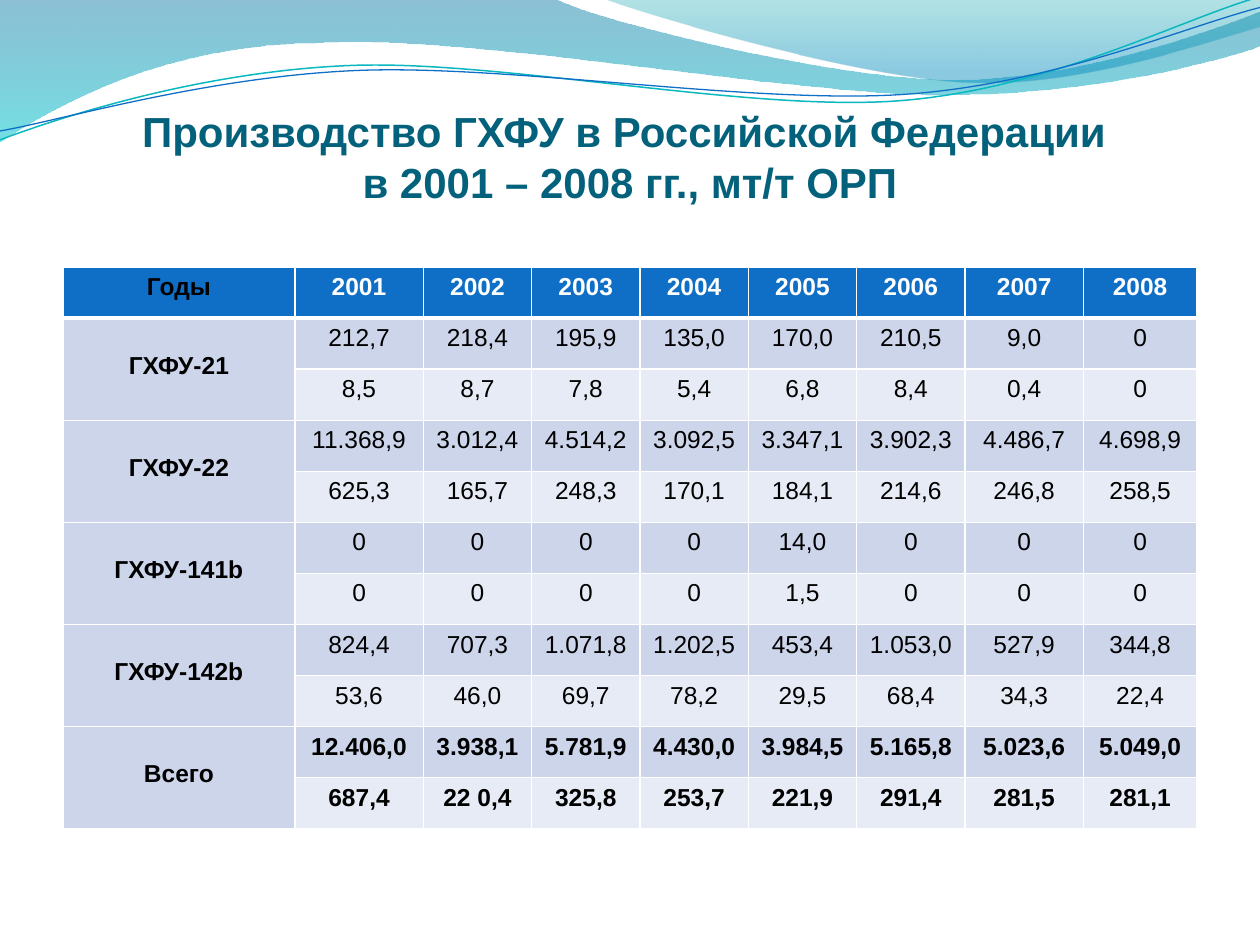
from dataclasses import dataclass
from math import cos, radians, sin

from lxml import etree
from pptx import Presentation
from pptx import util as u
from pptx.dml.color import RGBColor
from pptx.enum import text
from pptx.oxml.ns import qn
from pptx.slide import Slide

COLORS = {
    "title": "04617B", "header": "0F6FC6", "band_dark": "CCD5EA",
    "band_light": "E7EBF5", "white": "FFFFFF", "black": "000000",
    "wave_blue": "0074A1", "wave_cyan": "00C6CF", "crest_teal": "00A1A9",
    "crest_blue": "008BBF", "teal_line": "0AB8BF", "blue_line": "0F6FC6",
}

YEARS = [str(year) for year in range(2001, 2009)]
PRODUCTION = {
    "ГХФУ-21": [
        ["212,7", "218,4", "195,9", "135,0", "170,0", "210,5", "9,0", "0"],
        ["8,5", "8,7", "7,8", "5,4", "6,8", "8,4", "0,4", "0"],
    ],
    "ГХФУ-22": [
        ["11.368,9", "3.012,4", "4.514,2", "3.092,5", "3.347,1", "3.902,3", "4.486,7", "4.698,9"],
        ["625,3", "165,7", "248,3", "170,1", "184,1", "214,6", "246,8", "258,5"],
    ],
    "ГХФУ-141b": [
        ["0", "0", "0", "0", "14,0", "0", "0", "0"],
        ["0", "0", "0", "0", "1,5", "0", "0", "0"],
    ],
    "ГХФУ-142b": [
        ["824,4", "707,3", "1.071,8", "1.202,5", "453,4", "1.053,0", "527,9", "344,8"],
        ["53,6", "46,0", "69,7", "78,2", "29,5", "68,4", "34,3", "22,4"],
    ],
    "Всего": [
        ["12.406,0", "3.938,1", "5.781,9", "4.430,0", "3.984,5", "5.165,8", "5.023,6", "5.049,0"],
        ["687,4", "22 0,4", "325,8", "253,7", "221,9", "291,4", "281,5", "281,1"],
    ],
}
COLUMN_WIDTHS = [1.84, 1.02] + [0.86] * 5 + [0.94, 0.9]

WAVE = [
    (0, -0.01), (4.4, -0.01),
    (4.76, 0.17, 6.64, 0.63, 7.58, 0.63), (8.53, 0.63, 9.58, 0.26, 10, 0.09),
    (10.01, 0.36),
    (9.83, 0.44, 8.7, 0.76, 7.46, 0.75), (6.22, 0.75, 3.82, 0.28, 2.57, 0.34),
    (1.29, 0.35, 0.46, 0.83, -0.01, 1.13), (0, -0.01),
]
CREST = [
    (4.79, -0.01), (5.09, 0.11, 6.82, 0.62, 7.69, 0.65),
    (8.56, 0.69, 9.61, 0.32, 10, 0.21), (10, 0), (4.79, -0.01),
]
TEAL_CURVE = [
    (0, 1.11), (0.48, 0.93, 1.58, 0.57, 2.77, 0.52),
    (3.95, 0.47, 5.93, 0.89, 7.13, 0.8), (8.33, 0.71, 9.38, 0.15, 9.98, -0.02),
]
BLUE_CURVE = [
    (0, 1.04), (0.47, 0.96, 1.64, 0.61, 2.83, 0.56),
    (4.03, 0.51, 5.97, 0.83, 7.17, 0.75), (8.36, 0.67, 9.41, 0.21, 10, 0.06),
]


def rgb(name):
    return RGBColor.from_string(COLORS[name])


def turn(segment, pivot, degrees):
    c, s = cos(radians(degrees)), sin(radians(degrees))
    turned = []
    for x, y in zip(segment[::2], segment[1::2]):
        dx, dy = x - pivot[0], y - pivot[1]
        turned += [pivot[0] + dx * c - dy * s, pivot[1] + dx * s + dy * c]
    return turned


def write_text(frame, content, *, font, size, color, bold=False, before=0, after=0):
    paragraph = frame.paragraphs[0]
    paragraph.alignment = text.PP_ALIGN.CENTER
    paragraph.space_before, paragraph.space_after = u.Pt(before), u.Pt(after)
    for index, line in enumerate(content.split("\n")):
        if index:
            paragraph.add_line_break()
        run = paragraph.add_run()
        run.text = line
        run.font.name, run.font.size, run.font.bold = font, u.Pt(size), bold
        run.font.color.rgb = rgb(color)


@dataclass
class Deck:
    slide: Slide
    font: str = "Arial"
    title_size: int = 24
    table_size: int = 14

    def outline(self, segments, close):
        start, *points = [(u.Inches(x), u.Inches(y)) for segment in segments
                          for x, y in zip(segment[::2], segment[1::2])]
        builder = self.slide.shapes.build_freeform(*start, scale=1.0)
        builder.add_line_segments(points, close=close)
        shape = builder.convert_to_shape()
        shape.shadow.inherit = False
        lines = iter(list(shape._element.iter(qn("a:lnTo"))))
        for segment in segments[1:]:
            first = next(lines)
            if len(segment) == 6:
                first.tag = qn("a:cubicBezTo")
                for line in (next(lines), next(lines)):
                    first.append(line[0])
                    line.getparent().remove(line)
        return shape

    def wave(self, segments, stops):
        shape = self.outline(segments, True)
        shape.line.fill.background()
        shape.fill.gradient()
        shape.fill.gradient_angle = 270
        for stop, (position, color, _) in zip(shape.fill.gradient_stops, stops):
            stop.position = position
            stop.color.rgb = rgb(color)
        for tint, (_, _, opacity) in zip(shape._element.iter(qn("a:srgbClr")), stops):
            etree.SubElement(tint, qn("a:alpha"), val=str(opacity * 1000))

    def curve(self, segments, color, width, pivot, tilt=2.7):
        shape = self.outline([turn(segment, pivot, tilt) for segment in segments], False)
        shape.rotation = 360 - tilt
        shape.fill.background()
        shape.line.color.rgb = rgb(color)
        shape.line.width = u.Pt(width)

    def title(self, content, left, top, width, height):
        box = self.slide.shapes.add_textbox(*map(u.Inches, (left, top, width, height)))
        frame = box.text_frame
        frame.word_wrap = True
        frame.vertical_anchor = text.MSO_ANCHOR.BOTTOM
        frame.margin_left = frame.margin_right = frame.margin_bottom = 0
        write_text(frame, content, font=self.font, size=self.title_size,
                   color="title", bold=True)

    def cell(self, cell, content, fill, top=1, bottom=1, **style):
        properties = cell._tc.get_or_add_tcPr()
        for side, width in (("L", 1), ("R", 1), ("T", top), ("B", bottom)):
            border = etree.SubElement(properties, qn(f"a:ln{side}"), w=str(u.Pt(width)))
            paint = etree.SubElement(border, qn("a:solidFill"))
            etree.SubElement(paint, qn("a:srgbClr"), val=COLORS["white"])
        cell.fill.solid()
        cell.fill.fore_color.rgb = rgb(fill)
        if content:
            write_text(cell.text_frame, content, font=self.font,
                       size=self.table_size, **style)

    def table(self, left, top, height):
        rows = [["Годы", *YEARS]]
        for substance, (tonnes, potential) in PRODUCTION.items():
            rows += [[substance, *tonnes], ["", *potential]]
        grid = self.slide.shapes.add_table(
            len(rows), len(COLUMN_WIDTHS), u.Inches(left), u.Inches(top),
            u.Inches(sum(COLUMN_WIDTHS)), u.Inches(height)).table
        for column, width in zip(grid.columns, COLUMN_WIDTHS):
            column.width = u.Inches(width)
        for r, values in enumerate(rows):
            grid.rows[r].height = u.Inches(height / len(rows))
            for c, value in enumerate(values):
                cell = grid.cell(r, c)
                if r == 0:
                    self.cell(cell, value, "header", bottom=3, bold=True, before=6,
                              color="white" if c else "black")
                    continue
                band = "band_dark" if r % 2 or c == 0 else "band_light"
                self.cell(cell, value, band, top=3 if r == 1 else 1, color="black",
                          bold=c == 0 or r >= len(rows) - 2,
                          before=6 if c else 0, after=6 if c else 0)
                if c == 0 and value:
                    cell.margin_top = u.Inches(0.27)
                    cell.merge(grid.cell(r + 1, 0))


def main():
    presentation = Presentation()
    presentation.slide_width, presentation.slide_height = u.Inches(10), u.Inches(7.5)
    deck = Deck(presentation.slides.add_slide(presentation.slide_layouts[6]))
    deck.wave(WAVE, [(0, "wave_blue", 45), (1, "wave_cyan", 55)])
    deck.wave(CREST, [(0, "crest_teal", 30), (0.8, "crest_blue", 45)])
    deck.curve(TEAL_CURVE, "teal_line", 0.85, pivot=(4.99, 0.57))
    deck.curve(BLUE_CURVE, "blue_line", 0.75, pivot=(5, 0.59))
    deck.title("Производство ГХФУ в Российской Федерации \nв 2001 – 2008 гг., мт/т ОРП",
               0.5, 0.77, 9, 0.87)
    deck.table(0.5, 2.12, 4.46)
    presentation.save("out.pptx")


if __name__ == "__main__":
    main()
